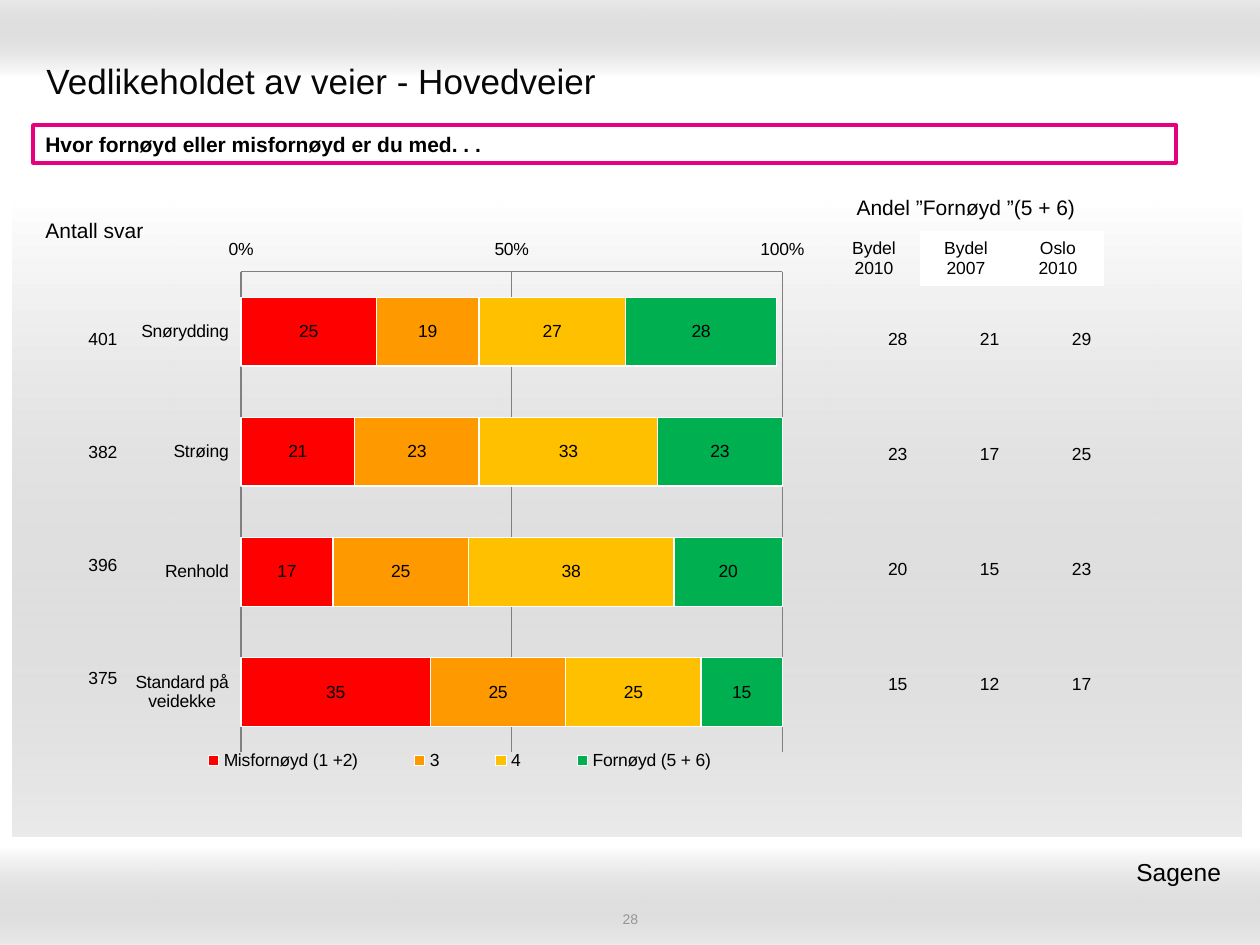
"""Build the road maintenance survey slide."""
from lxml import etree
from pptx import Presentation
from pptx import util as u
from pptx.chart import data as cd
from pptx.dml.color import RGBColor
from pptx.enum import chart as ch, shapes, text
from pptx.oxml import ns, parse_xml

SCALE = u.Inches(1) / 126
BLACK = RGBColor(0, 0, 0)
INK = RGBColor(8, 8, 8)
WHITE = RGBColor(255, 255, 255)
GREY = RGBColor(0x99, 0x99, 0x99)
PALE = RGBColor(0x96, 0x96, 0x96)
GRID = RGBColor(0x80, 0x80, 0x80)
PINK = RGBColor(0xE7, 0, 0x7E)
RED = RGBColor(255, 0, 0)
ORANGE = RGBColor(255, 0x99, 0)
AMBER = RGBColor(255, 0xC0, 0)
GREEN = RGBColor(0, 0xB0, 0x50)
NO_GRID = "{2D5ABB26-0587-4C30-8999-92F81FD0307C}"
LEFT, MID, RIGHT = text.PP_ALIGN.LEFT, text.PP_ALIGN.CENTER, text.PP_ALIGN.RIGHT

CATS = ["Snørydding", "Strøing", "Renhold", "Standard på veidekke"]
SERIES = [
    ("Misfornøyd (1 +2)", (25, 21, 17, 35), RED),
    ("3", (19, 23, 25, 25), ORANGE),
    ("4", (27, 33, 38, 25), AMBER),
    ("Fornøyd (5 + 6)", (28, 23, 20, 15), GREEN),
]
SHARES = [["28", "21", "29"], ["23", "17", "25"], ["20", "15", "23"], ["15", "12", "17"]]
COUNTS = [["401"], ["382"], ["396"], ["375"]]
HEADS = [["Andel ”Fornøyd ”(5 + 6)", "", ""],
         ["Bydel\n2010", "Bydel\n2007", "Oslo\n2010"]]


def px(*nums):
    """Turn pixel lengths into EMU."""
    return [u.Emu(round(n * SCALE)) for n in nums]


def style(font, size, color=BLACK, bold=False):
    """Set the common font traits."""
    font.name, font.size, font.bold = "Arial", u.Pt(size), bold
    font.color.rgb = color


def write(frame, words, size, color=BLACK, align=LEFT, bold=False):
    """Fill a text frame with one style."""
    frame.text = words
    for para in frame.paragraphs:
        para.alignment = align
        style(para.font, size, color, bold)


def label(slide, box, words, size, color=BLACK, align=LEFT,
          anchor=text.MSO_ANCHOR.MIDDLE):
    """Add a text box."""
    frame = slide.shapes.add_textbox(*px(*box)).text_frame
    frame.word_wrap = True
    frame.vertical_anchor = anchor
    write(frame, words, size, color, align)
    return frame


def rect(slide, box):
    """Add a plain rectangle without a shadow."""
    shape = slide.shapes.add_shape(shapes.MSO_SHAPE.RECTANGLE, *px(*box))
    shape.shadow.inherit = False
    return shape


def band(slide, box, angle):
    """Add a rectangle fading from white to faint grey."""
    shape = rect(slide, box)
    shape.line.fill.background()
    shape.fill.gradient()
    shape.fill.gradient_angle = angle
    for stop, color in zip(shape.fill.gradient_stops, (WHITE, GREY)):
        stop.color.rgb = color
    tint = shape.fill._fill._gradFill.findall(".//" + ns.qn("a:srgbClr"))[-1]
    etree.SubElement(tint, ns.qn("a:alpha")).set("val", "20000")


def banner(slide, box, words):
    """Add the outlined question box."""
    shape = rect(slide, box)
    shape.fill.solid()
    shape.fill.fore_color.rgb = WHITE
    shape.line.color.rgb = PINK
    shape.line.width = u.Pt(2)
    write(shape.text_frame, words, 12, bold=True)


def grid(slide, spot, wide, highs, rows, align, size=10):
    """Add a table without borders or fills."""
    cols = len(rows[0])
    box = px(*spot, wide * cols, sum(highs))
    table = slide.shapes.add_table(len(rows), cols, *box).table
    table._tbl.tblPr[0].text = NO_GRID
    table.first_row = table.horz_banding = False
    for col in table.columns:
        col.width = px(wide)[0]
    for row, high, words in zip(table.rows, highs, rows):
        row.height = px(high)[0]
        for cell, word in zip(row.cells, words):
            cell.fill.background()
            cell.vertical_anchor = text.MSO_ANCHOR.MIDDLE
            write(cell.text_frame, word, size, align=align)
    return table


def heads(slide):
    """Add the column heads above the shares."""
    table = grid(slide, (828, 185), 92, (46, 55), HEADS, MID)
    table.cell(0, 0).merge(table.cell(0, 2))
    table.cell(0, 0).text_frame.paragraphs[0].font.size = u.Pt(12)
    for col in (1, 2):
        fill = table.cell(1, col).fill
        fill.solid()
        fill.fore_color.rgb = WHITE


def place(node, inner, **spots):
    """Give a chart part a fixed layout."""
    old = node.find(ns.qn("c:layout"))
    if old is not None:
        node.remove(old)
    tags = {"xMode": "edge", "yMode": "edge", **spots}
    if inner:
        tags = {"layoutTarget": "inner", **tags}
    body = "".join(f'<c:{tag} val="{val}"/>' for tag, val in tags.items())
    new = parse_xml(f'<c:layout {ns.nsdecls("c")}><c:manualLayout>{body}'
                    '</c:manualLayout></c:layout>')
    node.insert(0 if inner else 1, new)


def axes(chart):
    """Style both chart axes."""
    cat, val = chart.category_axis, chart.value_axis
    cat.reverse_order = True
    cat.major_tick_mark = ch.XL_TICK_MARK.NONE
    val.major_tick_mark = ch.XL_TICK_MARK.INSIDE
    val.minimum_scale, val.maximum_scale, val.major_unit = 0, 100, 50
    val.has_major_gridlines = True
    val.tick_labels.number_format = r"General\%"
    val.tick_labels.number_format_is_linked = False
    for axis in (cat, val):
        axis.tick_label_position = ch.XL_TICK_LABEL_POSITION.LOW
        style(axis.tick_labels.font, 10)
    for line in (cat.format.line, val.format.line, val.major_gridlines.format.line):
        line.color.rgb = GRID
        line.width = u.Pt(0.75)


def bars(slide, box):
    """Add the stacked answer chart."""
    data = cd.CategoryChartData(number_format="0")
    data.categories = CATS
    for name, vals, _ in SERIES:
        data.add_series(name, vals)
    kind = ch.XL_CHART_TYPE.BAR_STACKED
    chart = slide.shapes.add_chart(kind, *px(*box), data).chart
    style(chart.font, 10)
    chart.has_title = False
    axes(chart)
    plot = chart.plots[0]
    plot.gap_width, plot.overlap, plot.vary_by_categories = 75, 100, False
    for series, (_, _, color) in zip(plot.series, SERIES):
        series.format.fill.solid()
        series.format.fill.fore_color.rgb = color
        series.format.line.color.rgb = WHITE
        series.format.line.width = u.Pt(0.75)
        marks = series.data_labels
        marks.show_value = True
        marks.number_format, marks.number_format_is_linked = "0", False
        style(marks.font, 10)
    chart.has_legend = True
    chart.legend.position = ch.XL_LEGEND_POSITION.BOTTOM
    chart.legend.include_in_layout = False
    style(chart.legend.font, 10)
    place(chart._chartSpace.chart.plotArea, True, x=0.17, y=0.08, w=0.78, h=0.84)
    place(chart.legend._element, False, x=0.05, y=0.91, w=0.87, h=0.05)


def main():
    """Build and save the slide."""
    deck = Presentation()
    deck.slide_width, deck.slide_height = px(1260, 945)
    slide = deck.slides.add_slide(deck.slide_layouts[6])
    band(slide, (0, 0, 1260, 78), 90)
    band(slide, (0, 847, 1260, 98), 270)
    band(slide, (13, 197, 1228, 640), 270)
    label(slide, (34, 46, 1191, 69), "Vedlikeholdet av veier - Hovedveier", 20, INK)
    label(slide, (431, 910, 399, 18), "28", 8, PALE, MID)
    banner(slide, (33, 125, 1143, 38), "Hvor fornøyd eller misfornøyd er du med. . .")
    bars(slide, (123, 226, 694, 572))
    grid(slide, (828, 282), 92, [115] * 4, SHARES, RIGHT)
    heads(slide)
    grid(slide, (64, 283), 66, [113] * 4, COUNTS, RIGHT)
    grid(slide, (5, 194), 179, [75], [["Antall svar"]], MID, 12)
    frame = label(slide, (769, 851, 471, 43), "Sagene", 14, align=RIGHT,
                  anchor=text.MSO_ANCHOR.TOP)
    frame.margin_right = px(19)[0]
    deck.save("out.pptx")


if __name__ == "__main__":
    main()
